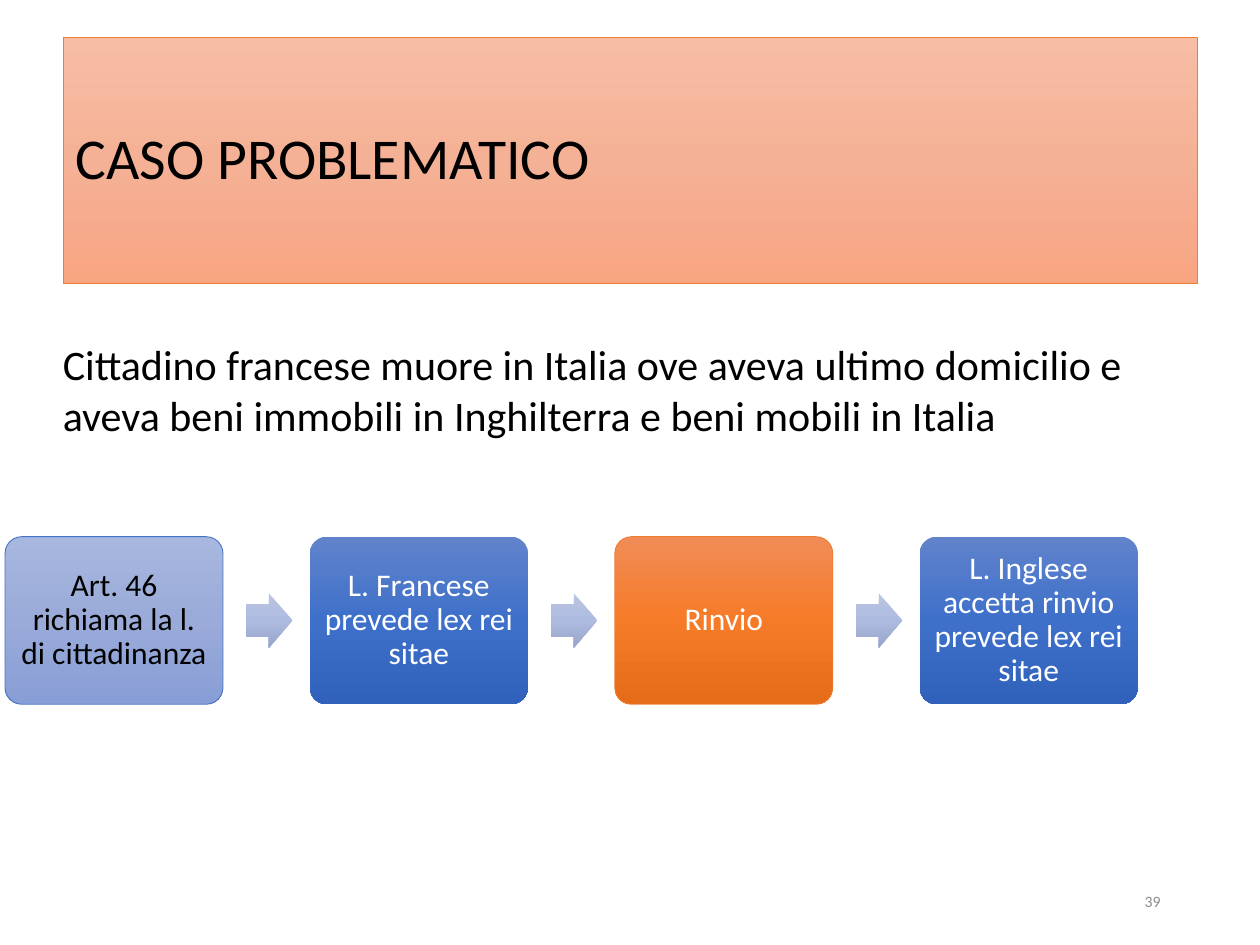
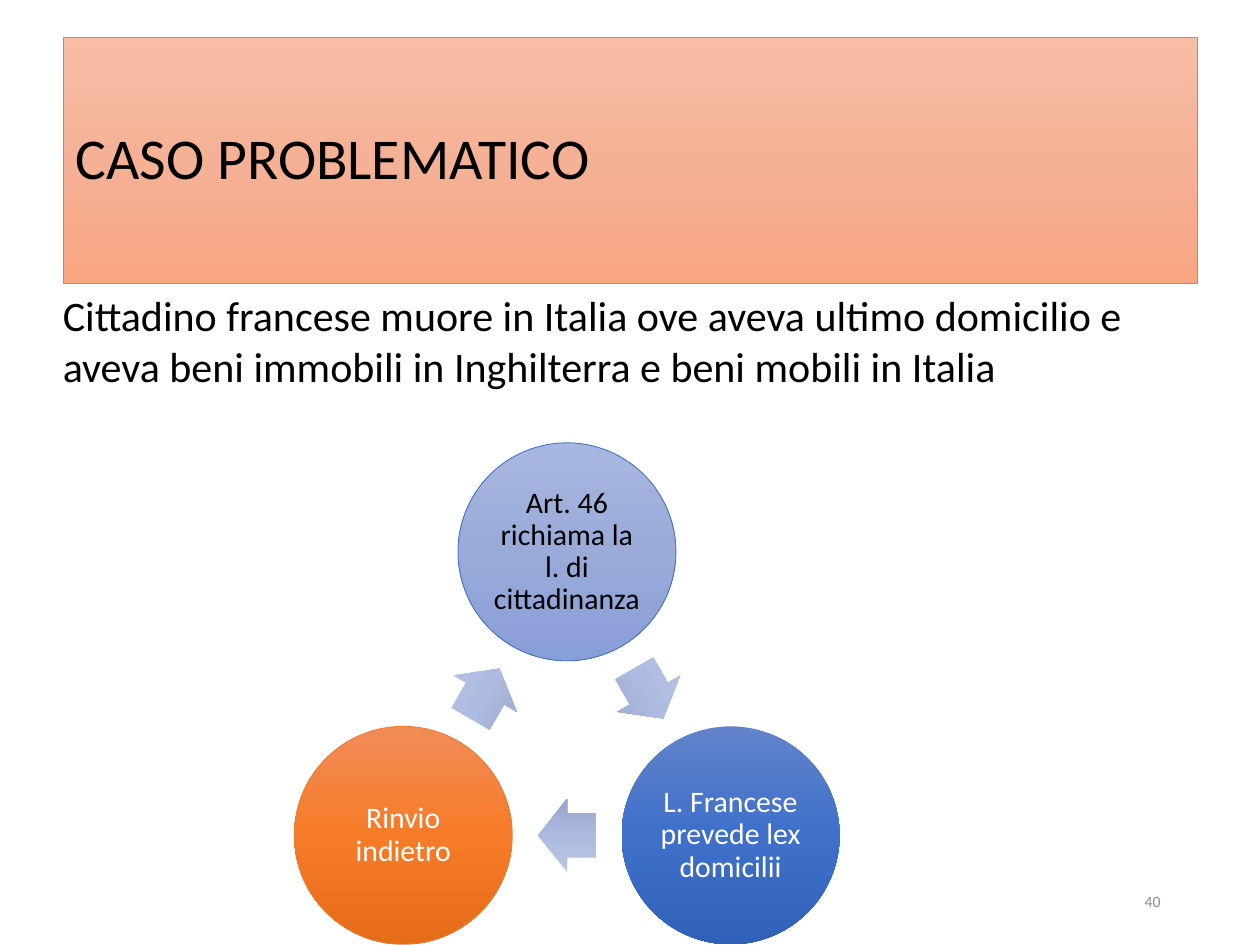
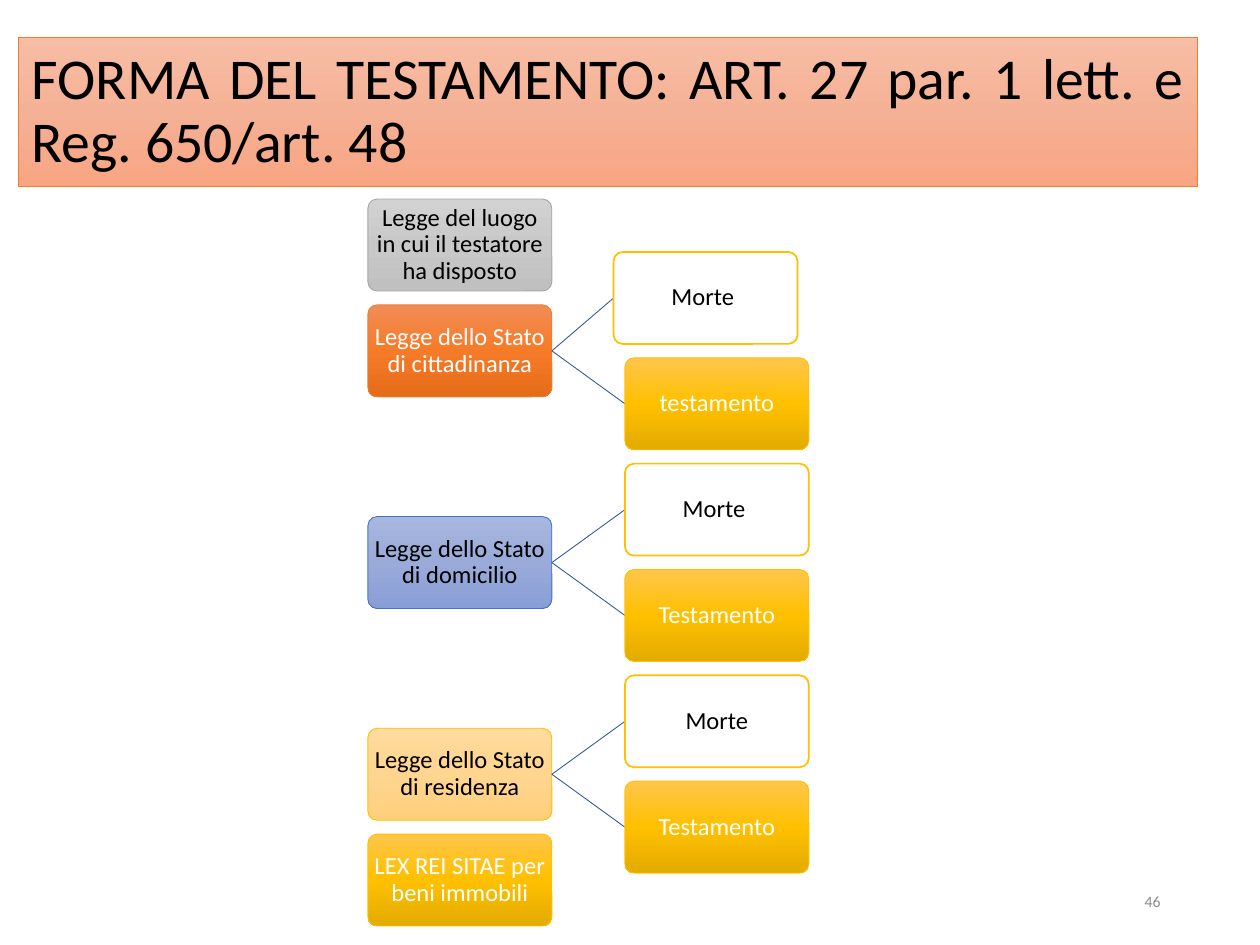
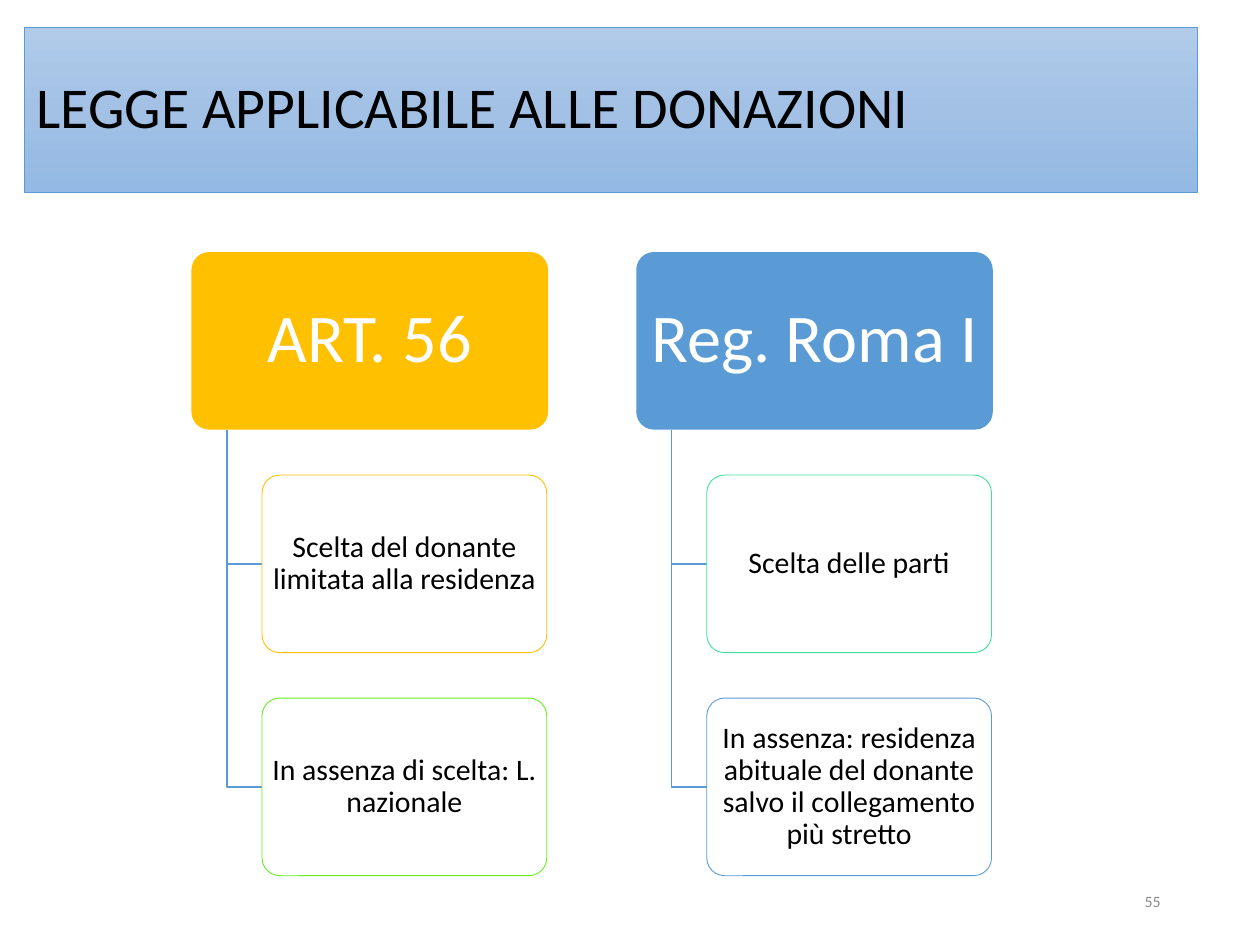
"""Builds four slides on the law applicable to successions and donations."""
import copy
import math

import pptx
import pptx.dml.color
import pptx.enum.shapes
import pptx.enum.text
import pptx.oxml.ns
import pptx.util
from lxml import etree

Inches = pptx.util.Inches
Pt = pptx.util.Pt
RGB = pptx.dml.color.RGBColor
SHAPE = pptx.enum.shapes.MSO_SHAPE
ALIGN = pptx.enum.text.PP_ALIGN
ANCHOR = pptx.enum.text.MSO_ANCHOR
AUTO_SIZE = pptx.enum.text.MSO_AUTO_SIZE
qn = pptx.oxml.ns.qn

FONT = "Calibri"
BLACK = RGB(0x00, 0x00, 0x00)
WHITE = RGB(0xFF, 0xFF, 0xFF)
NUMBER_GREY = RGB(0x8C, 0x8C, 0x8C)
ORANGE = RGB(0xED, 0x7D, 0x31)
BLUE = RGB(0x44, 0x72, 0xC4)
SKY = RGB(0x5B, 0x9B, 0xD5)
GOLD = RGB(0xFF, 0xC0, 0x00)
GREY = RGB(0xA5, 0xA5, 0xA5)
GREEN = RGB(0x67, 0xEF, 0x21)
MINT = RGB(0x3F, 0xE1, 0x9B)
BRANCH_BLUE = RGB(0x36, 0x5B, 0x9D)

PEACH_BAND = [RGB(0xF7, 0xBD, 0xA5), RGB(0xF5, 0xB1, 0x96), RGB(0xF8, 0xA5, 0x82)]
SKY_BAND = [RGB(0xB1, 0xCB, 0xE9), RGB(0xA3, 0xC1, 0xE5), RGB(0x93, 0xB9, 0xE4)]
ARROW_BLEND = [RGB(0xBB, 0xC5, 0xE3), RGB(0xAE, 0xBB, 0xE0), RGB(0x98, 0xA4, 0xCB)]
LILAC_BLEND = [RGB(0xA8, 0xB7, 0xDF), RGB(0x9A, 0xAB, 0xD9), RGB(0x88, 0x9E, 0xD7)]
BLUE_BLEND = [RGB(0x61, 0x83, 0xCB), RGB(0x3E, 0x70, 0xCA), RGB(0x30, 0x62, 0xBB)]
ORANGE_BLEND = [RGB(0xF1, 0x8C, 0x57), RGB(0xF6, 0x7B, 0x28), RGB(0xE5, 0x6C, 0x19)]
GREY_BLEND = [RGB(0xD2, 0xD2, 0xD2), RGB(0xC8, 0xC8, 0xC8), RGB(0xC0, 0xC0, 0xC0)]
GOLD_BLEND = [RGB(0xFF, 0xC6, 0x4B), RGB(0xFF, 0xC0, 0x00), RGB(0xE3, 0xAB, 0x00)]
SAND_BLEND = [RGB(0xFF, 0xDB, 0x9E), RGB(0xFF, 0xD5, 0x90), RGB(0xFF, 0xD0, 0x7C)]

LILAC = dict(fill=LILAC_BLEND, line=BLUE, color=BLACK)
DEEP_BLUE = dict(fill=BLUE_BLEND, color=WHITE)
VIVID_ORANGE = dict(fill=ORANGE_BLEND, line=ORANGE, color=WHITE)
SILVER = dict(fill=GREY_BLEND, line=GREY, color=BLACK)
RICH_GOLD = dict(fill=GOLD_BLEND, line=GOLD, color=WHITE)
SAND = dict(fill=SAND_BLEND, line=GOLD, color=BLACK)
GOLD_OUTLINE = dict(fill=WHITE, line=GOLD, width=1, color=BLACK)

CASE_TITLE = "CASO PROBLEMATICO"
CASE_BAND = (0.5, 0.3, 9, 1.95)
CASE_FACTS = ("Cittadino francese muore in Italia ove aveva ultimo domicilio e "
              "aveva beni immobili in Inghilterra e beni mobili in Italia")
RENVOI_STEPS = [
    ("Art. 46 richiama la l. di cittadinanza", LILAC),
    ("L. Francese prevede lex rei sitae", DEEP_BLUE),
    ("Rinvio", VIVID_ORANGE),
    ("L. Inglese accetta rinvio prevede lex rei sitae", DEEP_BLUE),
]
RENVOI_CYCLE = [
    ("Art. 46 richiama la l. di cittadinanza", LILAC),
    ("L. Francese prevede lex domicilii", DEEP_BLUE),
    ("Rinvio indietro", VIVID_ORANGE),
]
WILL_LAWS = [
    (0, "Legge del luogo in cui il testatore ha disposto", SILVER, []),
    (1, "Legge dello Stato di cittadinanza", VIVID_ORANGE,
     [(4.87, "Morte ", GOLD_OUTLINE), (4.96, "testamento", RICH_GOLD)]),
    (3, "Legge dello Stato di domicilio", LILAC,
     [(4.96, "Morte ", GOLD_OUTLINE), (4.96, "Testamento", RICH_GOLD)]),
    (5, "Legge dello Stato di residenza", SAND,
     [(4.96, "Morte", GOLD_OUTLINE), (4.96, "Testamento", RICH_GOLD)]),
    (6, "LEX REI SITAE per beni immobili", RICH_GOLD, []),
]
DONATION_RULES = [
    ("ART. 56", GOLD, [
        ("Scelta del donante limitata alla residenza ", GOLD),
        ("In assenza di scelta: L. nazionale", GREEN),
    ]),
    ("Reg. Roma I", SKY, [
        ("Scelta delle parti", MINT),
        ("In assenza: residenza abituale del donante salvo il collegamento più stretto", SKY),
    ]),
]


def write(shape, text, size=18, color=BLACK, align=ALIGN.CENTER, anchor=ANCHOR.MIDDLE,
          spacing=0.9, inset=(0.1, 0.05), auto_size=AUTO_SIZE.NONE):
    """Put one formatted paragraph in a shape."""
    frame = shape.text_frame
    frame.word_wrap = True
    frame.auto_size = auto_size
    frame.vertical_anchor = anchor
    frame.margin_left = frame.margin_right = Inches(inset[0])
    frame.margin_top = frame.margin_bottom = Inches(inset[1])
    paragraph = frame.paragraphs[0]
    paragraph.alignment = align
    paragraph.line_spacing = spacing
    run = paragraph.add_run()
    run.text = text
    run.font.name = FONT
    run.font.size = Pt(size)
    run.font.color.rgb = color


def paint(shape, fill, line=None, width=0.5):
    """Fill with one colour or a vertical blend of three, and outline."""
    if isinstance(fill, list):
        shape.fill.gradient()
        shape.fill.gradient_angle = 270
        stops = shape._element.spPr.find(".//" + qn("a:gsLst"))
        stops.insert(1, copy.deepcopy(stops[0]))
        for stop, color, position in zip(shape.fill.gradient_stops, fill, (0, 0.5, 1)):
            stop.color.rgb = color
            stop.position = position
    else:
        shape.fill.solid()
        shape.fill.fore_color.rgb = fill
    if line is None:
        shape.line.fill.background()
    else:
        shape.line.color.rgb = line
        shape.line.width = Pt(width)


def add_figure(slide, kind, box, adjustments=(), rotation=0, **look):
    """Add a painted preset shape without shadow."""
    figure = slide.shapes.add_shape(kind, *map(Inches, box))
    figure.shadow.inherit = False
    figure.rotation = rotation
    for index, value in enumerate(adjustments):
        figure.adjustments[index] = value
    paint(figure, **look)
    return figure


def add_node(slide, box, text, look, size, inset, kind=SHAPE.ROUNDED_RECTANGLE):
    """Add a diagram node with its label."""
    look = dict(look)
    color = look.pop("color")
    adjustments = (0.1,) if kind == SHAPE.ROUNDED_RECTANGLE else ()
    node = add_figure(slide, kind, box, adjustments, **look)
    write(node, text, size=size, color=color, inset=inset)


def add_flow_arrow(slide, box, rotation=0):
    """Add a pale block arrow."""
    add_figure(slide, SHAPE.RIGHT_ARROW, box, (0.6, 0.5), rotation, fill=ARROW_BLEND)


def add_branch(slide, start, end):
    """Add a thin straight line between two points."""
    branch = slide.shapes.add_connector(
        pptx.enum.shapes.MSO_CONNECTOR.STRAIGHT, *map(Inches, start + end))
    branch.line.color.rgb = BRANCH_BLUE
    branch.line.width = Pt(0.5)
    etree.SubElement(branch._element.spPr, qn("a:effectLst"))


def add_elbow(slide, x, top, end_x, end_y):
    """Add a line that drops and then turns right."""
    builder = slide.shapes.build_freeform(Inches(x), Inches(top))
    builder.add_line_segments(
        [(Inches(x), Inches(end_y)), (Inches(end_x), Inches(end_y))], close=False)
    elbow = builder.convert_to_shape()
    elbow.shadow.inherit = False
    elbow.fill.background()
    elbow.line.color.rgb = SKY
    elbow.line.width = Pt(1)


def add_text(slide, box, text, **style):
    """Add a text box."""
    write(slide.shapes.add_textbox(*map(Inches, box)), text, **style)


def start_slide(deck, title, band, number, fill=PEACH_BAND, line=ORANGE):
    """Add a slide with its title band and number."""
    slide = deck.slides.add_slide(deck.slide_layouts[5])
    heading = slide.shapes.title
    heading.left, heading.top, heading.width, heading.height = map(Inches, band)
    paint(heading, fill, line)
    write(heading, title, size=33, align=ALIGN.JUSTIFY)
    add_text(slide, (7.06, 6.95, 2.25, 0.4), str(number), size=9, color=NUMBER_GREY,
             align=ALIGN.RIGHT, spacing=1)
    return slide


def add_facts(slide, top):
    """Add the facts of the case."""
    add_text(slide, (0.4, top, 9.37, 0.91), CASE_FACTS, size=24, align=ALIGN.LEFT,
             anchor=ANCHOR.TOP, spacing=1, auto_size=AUTO_SIZE.SHAPE_TO_FIT_TEXT)


def build_renvoi_chain(deck):
    """Steps in a row, joined by arrows."""
    slide = start_slide(deck, CASE_TITLE, CASE_BAND, 39)
    add_facts(slide, 2.64)
    for index, (step, look) in enumerate(RENVOI_STEPS):
        left = 0.04 + 2.42 * index
        add_node(slide, (left, 4.26, 1.73, 1.33), step, look, 18, (0.07, 0.07))
        if index < len(RENVOI_STEPS) - 1:
            add_flow_arrow(slide, (left + 1.91, 4.71, 0.37, 0.43))


def build_renvoi_cycle(deck):
    """Circles on a ring, with arrows halfway between them."""
    slide = start_slide(deck, CASE_TITLE, CASE_BAND, 40)
    add_facts(slide, 2.25)

    def ring_box(radius, degrees, width, height):
        angle = math.radians(degrees)
        return (4.5 + radius * math.sin(angle) - width / 2,
                5.88 - radius * math.cos(angle) - height / 2, width, height)

    turn = 360 / len(RENVOI_CYCLE)
    for index, (step, look) in enumerate(RENVOI_CYCLE):
        degrees = turn * index
        add_node(slide, ring_box(1.5, degrees, 1.73, 1.73), step, look, 17,
                 (0.02, 0.02), SHAPE.OVAL)
        halfway = degrees + turn / 2
        add_flow_arrow(slide, ring_box(0.75, halfway, 0.46, 0.58), halfway)


def build_will_form(deck):
    """Laws in a column, each branching to its moments."""
    slide = start_slide(
        deck, "FORMA DEL TESTAMENTO: ART. 27 par. 1 lett. e Reg. 650/art. 48",
        (0.15, 0.3, 9.35, 1.18), 46)
    left, width, height = 2.92, 1.46, 0.73

    def row_top(row):
        return 1.58 + 0.84 * row

    for row, law, look, moments in WILL_LAWS:
        add_node(slide, (left, row_top(row), width, height), law, look, 14, (0.01, 0.01))
        for moment_row, (moment_left, moment, moment_look) in zip((row - 0.5, row + 0.5), moments):
            add_branch(slide, (left + width, row_top(row) + height / 2),
                       (moment_left, row_top(moment_row) + height / 2))
            add_node(slide, (moment_left, row_top(moment_row), width, height), moment,
                     moment_look, 14, (0.01, 0.01))


def build_donations(deck):
    """Two sources of law, each with its rules below."""
    slide = start_slide(deck, "LEGGE APPLICABILE ALLE DONAZIONI", (0.19, 0.22, 9.31, 1.31), 55,
                        SKY_BAND, SKY)
    top, height, pitch = 2, 1.41, 1.77
    for column, (source, fill, rules) in enumerate(DONATION_RULES):
        left = 1.52 + 3.53 * column
        add_node(slide, (left, top, 2.83, height), source, dict(fill=fill, color=WHITE), 39,
                 (0.08, 0.05))
        for row, (rule, line) in enumerate(rules, 1):
            rule_top = top + pitch * row
            add_elbow(slide, left + 0.28, top + height, left + 0.56, rule_top + height / 2)
            add_node(slide, (left + 0.56, rule_top, 2.26, height), rule,
                     dict(fill=WHITE, line=line, color=BLACK), 17, (0.04, 0.02))


def main():
    """Build and save the deck."""
    deck = pptx.Presentation()
    deck.slide_width, deck.slide_height = Inches(10), Inches(7.5)
    build_renvoi_chain(deck)
    build_renvoi_cycle(deck)
    build_will_form(deck)
    build_donations(deck)
    deck.save("out.pptx")


if __name__ == "__main__":
    main()
